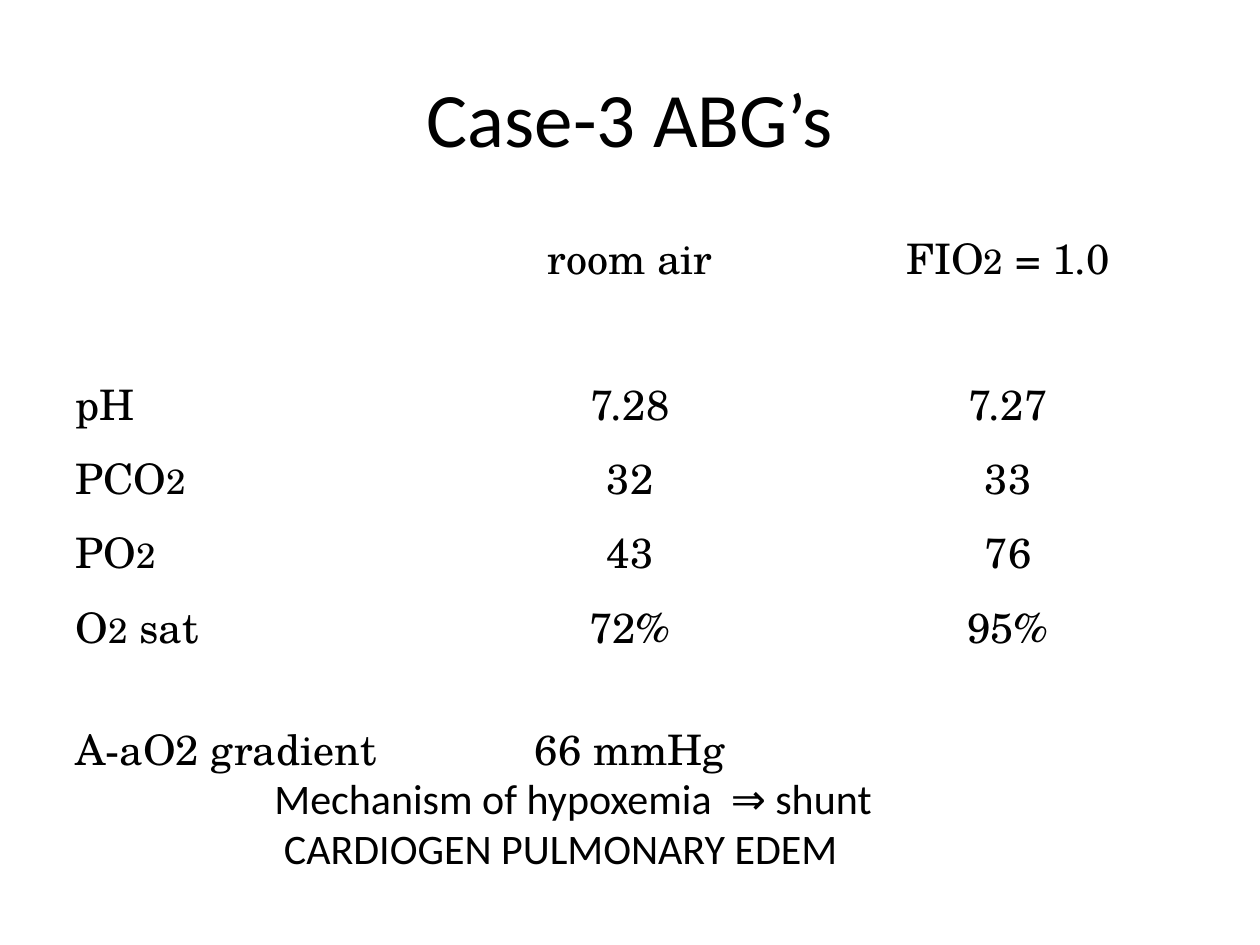
from pptx import Presentation
from pptx.dml.color import RGBColor as RGB
from pptx.enum.text import MSO_ANCHOR as ANCHOR, MSO_AUTO_SIZE as AUTO, PP_ALIGN as ALIGN
from pptx.util import Inches, Pt

COLORS = {"text": "000000"}
ROWS = [
    (1.16, ["", "room air", "FIO|2| = 1.0"]),
    (0.55, ["pH", "7.28", "7.27"]),
    (0.55, ["PCO|2|", "32", "33"]),
    (0.55, ["PO|2|", "43", "76"]),
    (0.81, ["O|2| sat\nA-aO2 gradient", "72%\n66 mmHg", "95%"]),
]


class Deck:
    body_font = "Calibri"
    table_font = "TeX Gyre Schola"
    size = 24
    small = 20
    gap = 35
    hang = 0.38

    def __init__(self, prs):
        self.s = prs.slides.add_slide(prs.slide_layouts[6])

    def run(self, p, text, font, size):
        r = p.add_run()
        r.text = text
        r.font.name = font
        r.font.size = Pt(size)
        r.font.color.rgb = RGB.from_string(COLORS["text"])

    def text(self, box, lines, size, align=ALIGN.LEFT, anchor=ANCHOR.TOP, wrap=True):
        tf = self.s.shapes.add_textbox(*map(Inches, box)).text_frame
        tf.word_wrap = wrap
        tf.auto_size = AUTO.NONE if wrap else AUTO.SHAPE_TO_FIT_TEXT
        tf.vertical_anchor = anchor
        for i, line in enumerate(lines):
            p = tf.add_paragraph() if i else tf.paragraphs[0]
            p.alignment = align
            self.run(p, line, self.body_font, size)

    def cell(self, cell, text, align):
        cell.fill.background()
        tf = cell.text_frame
        for i, line in enumerate(text.split("\n")):
            p = tf.add_paragraph() if i else tf.paragraphs[0]
            p.alignment = align
            p.space_before = Pt(self.gap if i else 0)
            pPr = p._p.get_or_add_pPr()
            pPr.set("marL", str(Inches(self.hang)))
            pPr.set("indent", str(-Inches(self.hang)))
            for j, part in enumerate(line.split("|")):
                if part:
                    self.run(p, part, self.table_font, self.small if j % 2 else self.size)

    def table(self, box, rows):
        table = self.s.shapes.add_table(len(rows), len(rows[0][1]), *map(Inches, box)).table
        table.first_row = table.horz_banding = False
        for i, (height, texts) in enumerate(rows):
            table.rows[i].height = Inches(height)
            for j, text in enumerate(texts):
                self.cell(table.cell(i, j), text, ALIGN.CENTER if j else ALIGN.LEFT)


def main():
    prs = Presentation()
    prs.slide_width, prs.slide_height = Inches(10), Inches(7.5)
    deck = Deck(prs)
    deck.text((0.5, 0.3, 9, 1.25), ["Case-3 ABG’s"], 44, ALIGN.CENTER, ANCHOR.MIDDLE)
    deck.table((0.5, 1.75, 9, 4.1), ROWS)
    deck.text((2.08, 6.08, 5.03, 0.91),
              ["Mechanism of hypoxemia  ⇒ shunt", " CARDIOGEN PULMONARY EDEM"],
              deck.size, wrap=False)
    prs.save("out.pptx")


if __name__ == "__main__":
    main()
